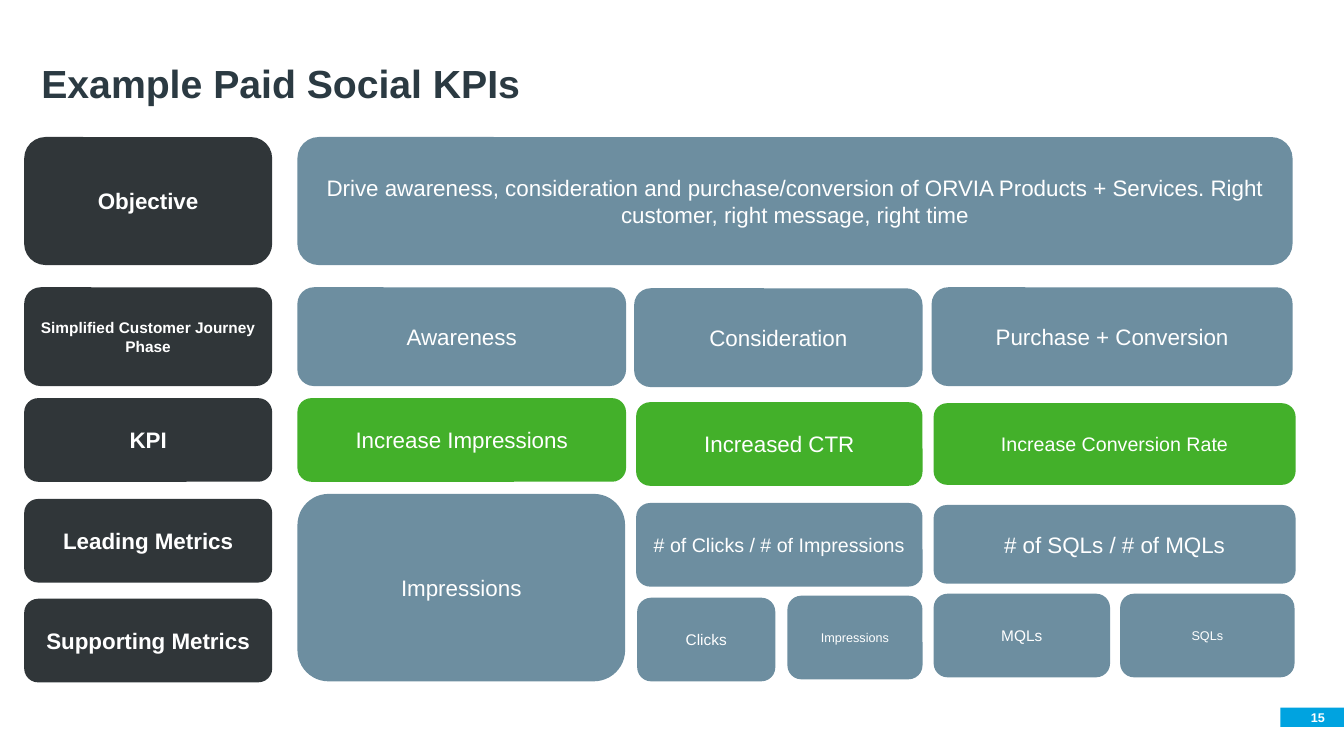
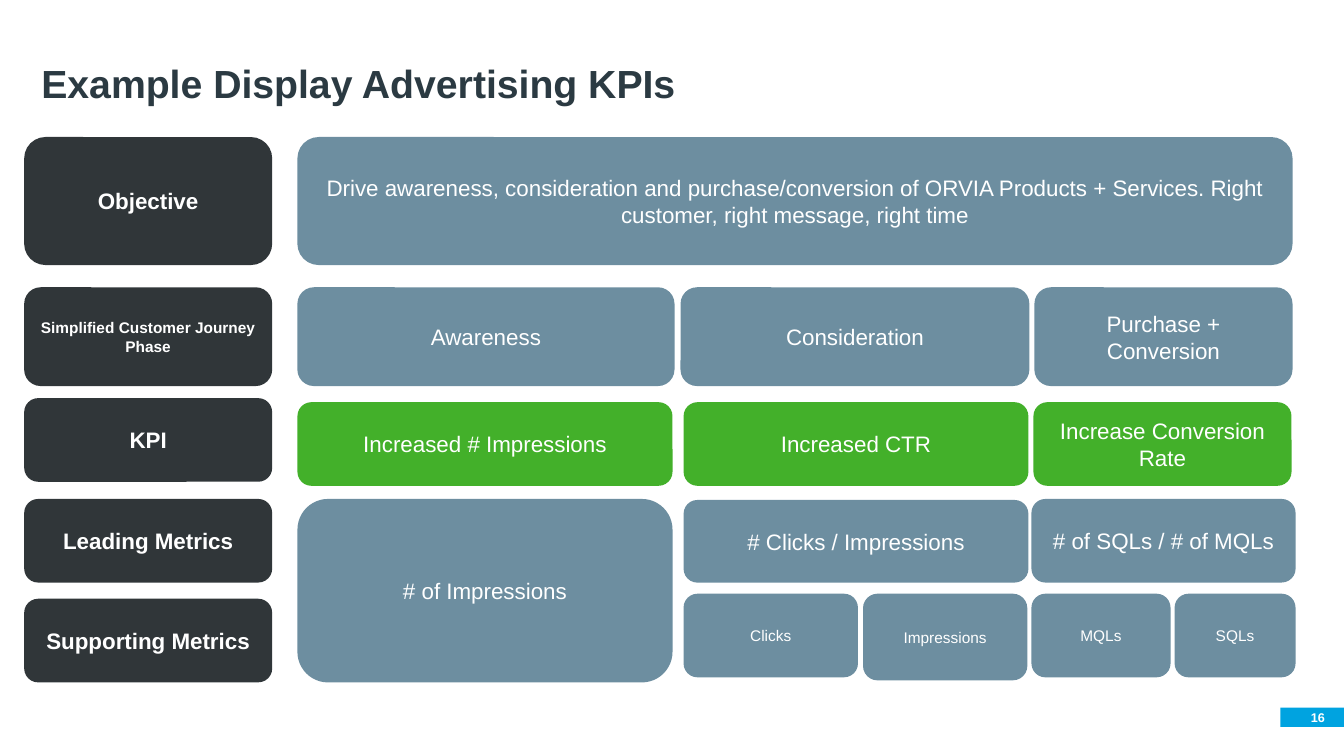
from pptx import Presentation
from pptx.dml.color import RGBColor
from pptx.enum.shapes import MSO_SHAPE
from pptx.enum.text import MSO_ANCHOR, MSO_AUTO_SIZE, PP_ALIGN
from pptx.util import Inches, Pt

FONT = "Arial"
WHITE, TITLE_INK = "FFFFFF", "2B3A42"
CHARCOAL, SLATE, GREEN, CYAN = "303639", "6D8EA0", "43B02A", "00A3E0"

LABEL_LEFT, LABEL_WIDTH = 0.24, 2.46
CONTENT_LEFT, CONTENT_WIDTH = 2.95, 9.87
OBJECTIVE_TOP, OBJECTIVE_HEIGHT = 1.36, 1.27
PHASE_TOP, PHASE_HEIGHT = 2.85, 0.98
METRIC_HEIGHT = 0.83

OBJECTIVE = ("Drive awareness, consideration and purchase/conversion of ORVIA "
             "Products + Services. Right customer, right message, right time")

# Row labels: text, top, height, size
ROW_LABELS = [
    ("Objective", OBJECTIVE_TOP, OBJECTIVE_HEIGHT, 16),
    ("Simplified Customer Journey Phase", PHASE_TOP, PHASE_HEIGHT, 11),
    ("KPI", 3.95, METRIC_HEIGHT, 16),
    ("Leading Metrics", 4.95, METRIC_HEIGHT, 16),
    ("Supporting Metrics", 5.94, METRIC_HEIGHT, 16),
]

# Cards per slide: text, left, top, width, height, size
PAID_SOCIAL = {
    "number": 15,
    "title": "Example Paid Social KPIs",
    "phases": [
        ("Awareness", CONTENT_LEFT, PHASE_TOP, 3.26, PHASE_HEIGHT, 16),
        ("Consideration", 6.29, 2.86, 2.86, PHASE_HEIGHT, 16),
        ("Purchase + Conversion", 9.24, PHASE_TOP, 3.58, PHASE_HEIGHT, 16),
    ],
    "kpis": [
        ("Increase Impressions", CONTENT_LEFT, 3.95, 3.26, METRIC_HEIGHT, 16),
        ("Increased CTR", 6.31, 3.99, 2.84, METRIC_HEIGHT, 16),
        ("Increase Conversion Rate", 9.26, 4, 3.59, 0.81, 14),
    ],
    "metrics": [
        ("Impressions", CONTENT_LEFT, 4.9, 3.25, 1.86, 16),
        ("# of Clicks / # of Impressions", 6.31, 4.99, 2.84, METRIC_HEIGHT, 14),
        ("# of SQLs / # of MQLs", 9.26, 5.01, 3.59, 0.78, 16),
        ("Clicks", 6.32, 5.93, 1.37, METRIC_HEIGHT, 11),
        ("Impressions", 7.81, 5.91, 1.34, METRIC_HEIGHT, 9),
        ("MQLs", 9.26, 5.89, 1.75, METRIC_HEIGHT, 11),
        ("SQLs", 11.11, 5.89, 1.73, METRIC_HEIGHT, 9),
    ],
}
DISPLAY_ADVERTISING = {
    "number": 16,
    "title": "Example Display Advertising KPIs",
    "phases": [
        ("Awareness", CONTENT_LEFT, PHASE_TOP, 3.74, PHASE_HEIGHT, 16),
        ("Consideration", 6.75, PHASE_TOP, 3.46, PHASE_HEIGHT, 16),
        ("Purchase + Conversion", 10.26, PHASE_TOP, 2.56, PHASE_HEIGHT, 16),
    ],
    "kpis": [
        ("Increased # Impressions", CONTENT_LEFT, 3.99, 3.72, METRIC_HEIGHT, 16),
        ("Increased CTR", 6.78, 3.99, 3.42, METRIC_HEIGHT, 16),
        ("Increase Conversion Rate", 10.25, 3.99, 2.56, METRIC_HEIGHT, 16),
    ],
    "metrics": [
        ("# of Impressions", CONTENT_LEFT, 4.95, 3.72, 1.82, 16),
        ("# Clicks / Impressions", 6.78, 4.96, 3.42, 0.82, 16),
        ("# of SQLs / # of MQLs", 10.23, 4.95, 2.62, METRIC_HEIGHT, 16),
        ("Clicks", 6.78, 5.89, 1.73, METRIC_HEIGHT, 11),
        ("Impressions", 8.56, 5.89, 1.63, 0.86, 11),
        ("MQLs", 10.23, 5.89, 1.38, METRIC_HEIGHT, 11),
        ("SQLs", 11.65, 5.89, 1.2, METRIC_HEIGHT, 11),
    ],
}


def rgb(color):
    return RGBColor.from_string(color)


class KpiDeck:
    def __init__(self):
        self.prs = Presentation()
        self.prs.slide_width, self.prs.slide_height = Inches(13.33), Inches(7.5)
        self.slide = None

    def new_slide(self, title, number):
        self.slide = self.prs.slides.add_slide(self.prs.slide_layouts[5])
        self.page_number(number)
        self.title(title)

    def set_text(self, shape, text, size, color=WHITE, bold=False,
                 align=PP_ALIGN.CENTER, anchor=MSO_ANCHOR.MIDDLE):
        frame = shape.text_frame
        frame.text = text
        frame.word_wrap = True
        frame.auto_size = MSO_AUTO_SIZE.NONE
        frame.vertical_anchor = anchor
        paragraph = frame.paragraphs[0]
        paragraph.alignment = align
        font = paragraph.runs[0].font
        font.name, font.size, font.bold = FONT, Pt(size), bold
        font.color.rgb = rgb(color)
        return frame

    def title(self, text):
        heading = self.slide.shapes.title
        heading.left, heading.top = Inches(0.31), Inches(0.27)
        heading.width, heading.height = Inches(12.51), Inches(0.84)
        frame = self.set_text(heading, text, 28, TITLE_INK, True,
                              PP_ALIGN.LEFT, MSO_ANCHOR.BOTTOM)
        frame.paragraphs[0].line_spacing = 0.9

    def block(self, preset, left, top, width, height, fill):
        block = self.slide.shapes.add_shape(
            preset, Inches(left), Inches(top), Inches(width), Inches(height))
        block.shadow.inherit = False
        block.fill.solid()
        block.fill.fore_color.rgb = rgb(fill)
        block.line.fill.background()
        return block

    def card(self, text, left, top, width, height, size, fill=SLATE, bold=False):
        card = self.block(MSO_SHAPE.ROUNDED_RECTANGLE, left, top, width, height, fill)
        self.set_text(card, text, size, bold=bold)

    def page_number(self, number):
        tab = self.block(MSO_SHAPE.RECTANGLE, 12.7, 7.02, 0.63, 0.19, CYAN)
        frame = self.set_text(tab, str(number), 9, bold=True, align=PP_ALIGN.RIGHT)
        frame.margin_left = frame.margin_top = frame.margin_bottom = 0
        frame.margin_right = Inches(0.19)

    def kpi_slide(self, content):
        self.new_slide(content["title"], content["number"])
        # Row labels
        for text, top, height, size in ROW_LABELS:
            self.card(text, LABEL_LEFT, top, LABEL_WIDTH, height, size, CHARCOAL, True)
        # Objective, then phases, KPIs and metrics
        self.card(OBJECTIVE, CONTENT_LEFT, OBJECTIVE_TOP, CONTENT_WIDTH,
                  OBJECTIVE_HEIGHT, 16)
        for group, fill in (("phases", SLATE), ("kpis", GREEN), ("metrics", SLATE)):
            for card in content[group]:
                self.card(*card, fill=fill)


def main():
    deck = KpiDeck()
    for content in (PAID_SOCIAL, DISPLAY_ADVERTISING):
        deck.kpi_slide(content)
    deck.prs.save("out.pptx")


if __name__ == "__main__":
    main()
